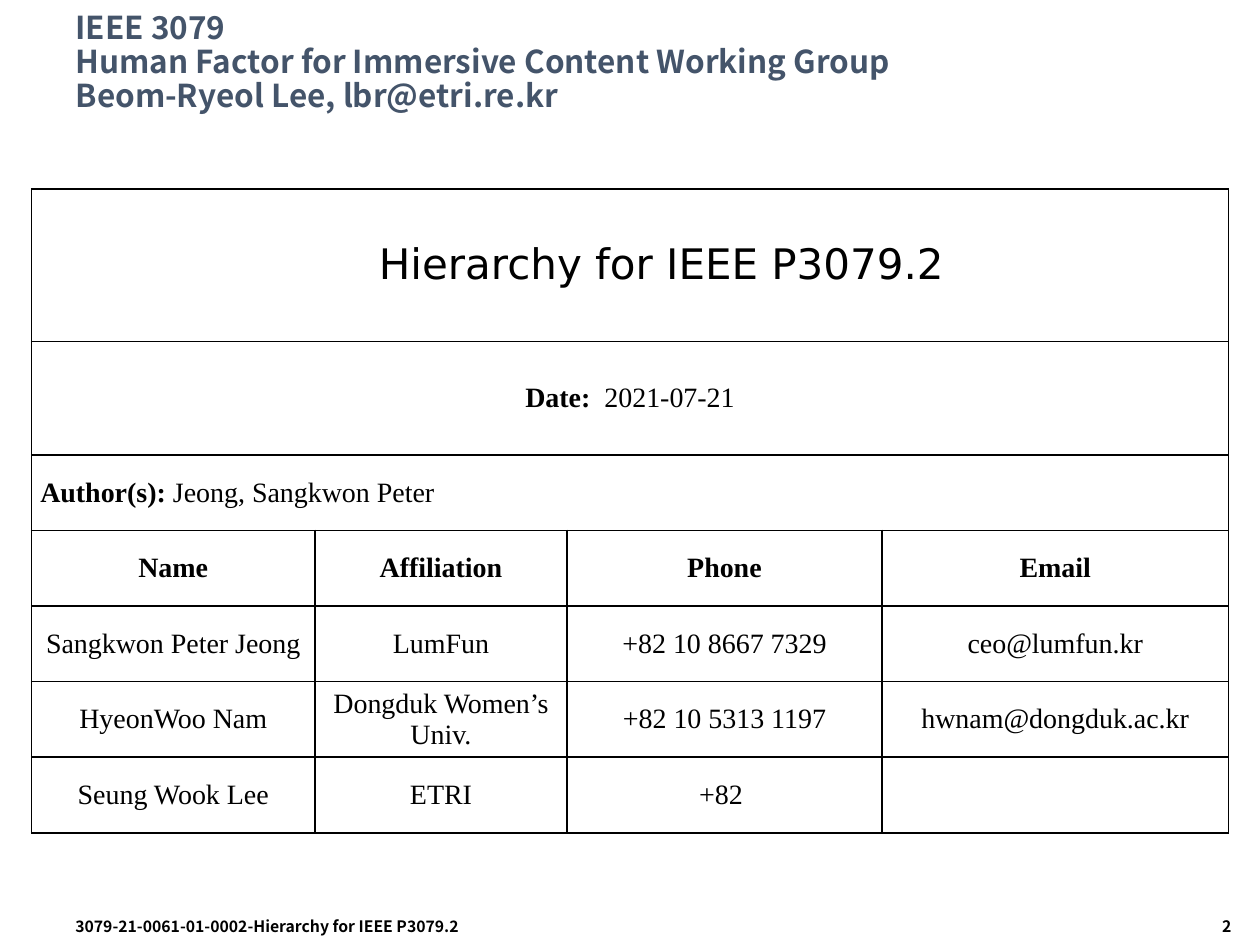
from lxml import etree
from pptx import Presentation, util as u
from pptx.dml.color import RGBColor
from pptx.enum import text
from pptx.oxml.ns import qn

BLACK = RGBColor(0x00, 0x00, 0x00)
SLATE = RGBColor(0x44, 0x54, 0x6A)
SANS = "Noto Sans CJK KR"
SERIF = "Times New Roman"
WIDE = "DejaVu Sans"
LEFT, MID, RIGHT = text.PP_ALIGN.LEFT, text.PP_ALIGN.CENTER, text.PP_ALIGN.RIGHT


class Deck:
    def __init__(self, wide, high, cols, rows):
        self.prs = Presentation()
        self.prs.slide_width = u.Inches(wide)
        self.prs.slide_height = u.Inches(high)
        self.col = self.prs.slide_width / cols
        self.row = self.prs.slide_height / rows
        self.slide = self.prs.slides.add_slide(self.prs.slide_layouts[5])

    def across(self, n):
        return u.Emu(round(n * self.col))

    def down(self, n):
        return u.Emu(round(n * self.row))

    def area(self, x, y, w, h):
        return self.across(x), self.down(y), self.across(w), self.down(h)

    def run(self, para, words, size, face, bold=False, color=BLACK):
        run = para.add_run()
        run.text = words
        font = run.font
        font.size, font.name, font.bold = u.Pt(size), face, bold
        font.color.rgb = color
        for tag in ("a:ea", "a:cs"):
            etree.SubElement(font._element, qn(tag)).set("typeface", face)

    def title(self, lines, *area):
        shape = self.slide.shapes.title
        shape.left, shape.top, shape.width, shape.height = self.area(*area)
        frame = shape.text_frame
        frame.word_wrap = True
        frame.auto_size = text.MSO_AUTO_SIZE.NONE
        frame.vertical_anchor = text.MSO_ANCHOR.MIDDLE
        para = frame.paragraphs[0]
        para.alignment, para.line_spacing = LEFT, 0.9
        for i, line in enumerate(lines):
            if i:
                para.add_line_break()
            self.run(para, line, 18, SANS, True, SLATE)

    def note(self, words, align, *area):
        frame = self.slide.shapes.add_textbox(*self.area(*area)).text_frame
        frame.word_wrap = True
        para = frame.paragraphs[0]
        para.alignment = align
        self.run(para, words, 9, SANS, True)

    def table(self, x, y, cols, rows):
        area = self.area(x, y, sum(cols), sum(rows))
        grid = self.slide.shapes.add_table(len(rows), len(cols), *area).table
        grid.first_row = grid.horz_banding = False
        for part, n in zip(grid.columns, cols):
            part.width = self.across(n)
        for part, n in zip(grid.rows, rows):
            part.height = self.down(n)
        for cell in grid.iter_cells():
            self.frame(cell)
        return grid

    def frame(self, cell):
        cell.margin_left = cell.margin_right = u.Inches(0.07)
        cell.margin_top = cell.margin_bottom = 0
        cell.vertical_anchor = text.MSO_ANCHOR.MIDDLE
        props = cell._tc.get_or_add_tcPr()
        for side in ("a:lnL", "a:lnR", "a:lnT", "a:lnB"):
            line = etree.SubElement(props, qn(side), w=str(u.Pt(1)))
            fill = etree.SubElement(line, qn("a:solidFill"))
            etree.SubElement(fill, qn("a:srgbClr"), val=str(BLACK))
        cell.fill.background()

    def fill(self, cell, runs, align=MID, size=16, face=SERIF, after=0, indent=0):
        para = cell.text_frame.paragraphs[0]
        para.alignment = align
        para.space_after = u.Pt(after)
        if indent:
            para._p.get_or_add_pPr().set("marL", str(u.Inches(indent)))
        for words, bold in runs:
            self.run(para, words, size, face, bold)


def main():
    deck = Deck(10, 7.5, 40, 30)
    grid = deck.table(1, 6, [9, 8, 10, 11], [4.84, 3.6] + [2.4] * 5)
    for r in range(3):
        grid.cell(r, 0).merge(grid.cell(r, 3))
    deck.fill(grid.cell(0, 0), [("Hierarchy for IEEE P3079.2", False)],
              size=24, face=WIDE, after=12, indent=0.5)
    deck.fill(grid.cell(1, 0), [("Date: ", True), (" 2021-07-21", False)], after=12)
    deck.fill(grid.cell(2, 0),
              [("Author(s): ", True), ("Jeong, Sangkwon Peter", False)], LEFT)

    people = [
        ("Name", "Affiliation", "Phone", "Email"),
        ("Sangkwon Peter Jeong", "LumFun", "+82 10 8667 7329", "ceo@lumfun.kr"),
        ("HyeonWoo Nam", "Dongduk Women’s Univ.", "+82 10 5313 1197",
         "hwnam@dongduk.ac.kr"),
        ("Seung Wook Lee", "ETRI", "+82 "),
    ]
    for r, person in enumerate(people):
        for c, words in enumerate(person):
            deck.fill(grid.cell(r + 3, c), [(words, r == 0)])

    deck.title(["IEEE 3079", "Human Factor for Immersive Content Working Group",
                "Beom-Ryeol Lee, lbr@etri.re.kr"], 2, 0.68, 36, 2.68)
    deck.note("3079-21-0061-01-0002-Hierarchy for IEEE P3079.2", LEFT,
              2, 28.92, 21.32, 1.08)
    deck.note("2", RIGHT, 33, 28.92, 6.48, 1.08)
    deck.prs.save("out.pptx")


if __name__ == "__main__":
    main()
